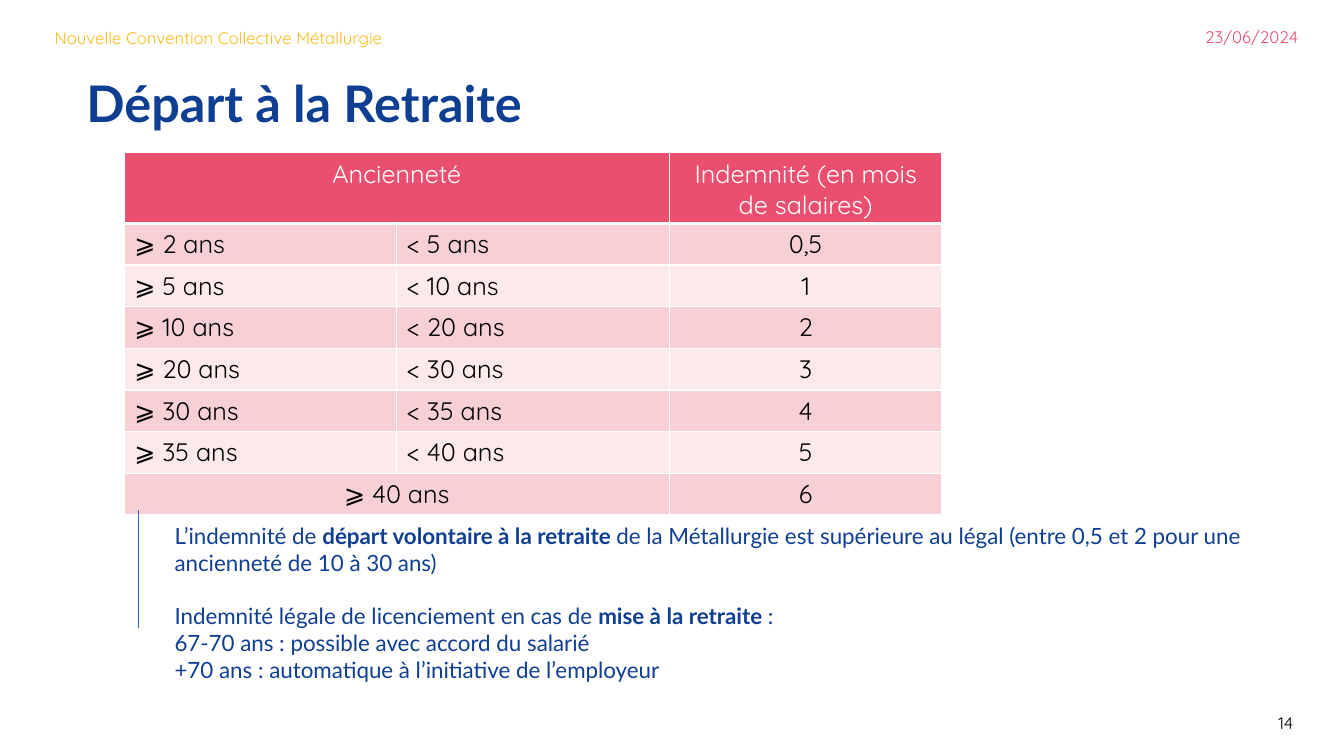
"""Build the slide on retirement allowances by length of service."""
from dataclasses import dataclass

from lxml import etree
from pptx import Presentation
from pptx import util as u
from pptx.dml.color import RGBColor
from pptx.enum import shapes, text
from pptx.oxml.ns import qn


@dataclass(frozen=True)
class Theme:
    """Colours, fonts and type sizes of the slide."""
    blue: str = "0F3F93"
    rule: str = "2669B2"
    yellow: str = "FBBB1D"
    pink: str = "EA4F70"
    band_dark: str = "F7D0D5"
    band_light: str = "FBE9EB"
    white: str = "FFFFFF"
    black: str = "000000"
    heading_font: str = "Lato"
    body_font: str = "Quicksand"
    title_size: int = 36
    table_size: int = 18
    note_size: int = 16
    small_size: int = 12


THEME = Theme()
LEFT, CENTER, RIGHT = text.PP_ALIGN.LEFT, text.PP_ALIGN.CENTER, text.PP_ALIGN.RIGHT

HEADERS = ("Ancienneté", "", "Indemnité (en mois de salaires)")
ALLOWANCES = (
    ("⩾ 2 ans", "< 5 ans", "0,5"),
    ("⩾ 5 ans", "< 10 ans", "1"),
    ("⩾ 10 ans", "< 20 ans", "2"),
    ("⩾ 20 ans", "< 30 ans", "3"),
    ("⩾ 30 ans", "< 35 ans", "4"),
    ("⩾ 35 ans", "< 40 ans", "5"),
    ("⩾ 40 ans", "", "6"),
)
NOTE = (
    (("L’indemnité de ", False),
     ("départ volontaire à la retraite ", True),
     ("de la Métallurgie est supérieure au légal (entre 0,5 et 2 pour une "
      "ancienneté de 10 à 30 ans)", False)),
    (("Indemnité légale de licenciement en cas de ", False),
     ("mise à la retraite ", True),
     (":", False)),
    (("67-70 ans : possible avec accord du salarié", False),),
    (("+70 ans : automatique à l’initiative de l’employeur", False),),
)


def add_run(paragraph, words, font, size, color, bold=False):
    """Append one formatted run to a paragraph."""
    run = paragraph.add_run()
    run.text = words
    run.font.name = font
    run.font.size = u.Pt(size)
    run.font.bold = bold
    run.font.color.rgb = RGBColor.from_string(color)


def add_label(slide, box, words, font, size, color, align=LEFT, bold=False, inset=True):
    """Add a one-line text box and return its paragraph."""
    frame = slide.shapes.add_textbox(*map(u.Cm, box)).text_frame
    frame.word_wrap = True
    if not inset:
        frame.margin_left = frame.margin_top = frame.margin_right = frame.margin_bottom = 0
    paragraph = frame.paragraphs[0]
    paragraph.alignment = align
    add_run(paragraph, words, font, size, color, bold)
    return paragraph


def add_note(slide, box):
    """Add the outlined box that explains the allowances."""
    shape = slide.shapes.add_shape(shapes.MSO_SHAPE.RECTANGLE, *map(u.Cm, box))
    shape.shadow.inherit = False
    shape.fill.background()
    shape.line.color.rgb = RGBColor.from_string(THEME.white)
    shape.line.width = u.Pt(0.75)
    frame = shape.text_frame
    frame.word_wrap = True
    frame.vertical_anchor = text.MSO_ANCHOR.TOP
    for index, runs in enumerate(NOTE):
        paragraph = frame.add_paragraph() if index else frame.paragraphs[0]
        paragraph.alignment = LEFT
        if index == 1:
            paragraph.space_before = u.Pt(19.2)
        for words, bold in runs:
            add_run(paragraph, words, THEME.heading_font, THEME.note_size, THEME.blue, bold)


def set_borders(cell, bottom_width):
    """Draw white borders on the four sides of a cell."""
    properties = cell._tc.get_or_add_tcPr()
    for side, width in (("L", 1), ("R", 1), ("T", 1), ("B", bottom_width)):
        line = etree.SubElement(properties, qn(f"a:ln{side}"), w=str(u.Pt(width)))
        fill = etree.SubElement(line, qn("a:solidFill"))
        etree.SubElement(fill, qn("a:srgbClr"), val=THEME.white)


def fill_cell(cell, words, background, color, align, bottom_width):
    """Set the borders, fill and text of a table cell."""
    set_borders(cell, bottom_width)
    cell.fill.solid()
    cell.fill.fore_color.rgb = RGBColor.from_string(background)
    if words:
        paragraph = cell.text_frame.paragraphs[0]
        paragraph.alignment = align
        add_run(paragraph, words, THEME.body_font, THEME.table_size, color)


def add_allowance_table(slide, left, top):
    """Add the table of allowances by length of service."""
    column_width, header_height, row_height = 6.87, 1.76, 1.05
    rows = (HEADERS, *ALLOWANCES)
    table = slide.shapes.add_table(
        len(rows), len(HEADERS), u.Cm(left), u.Cm(top),
        u.Cm(column_width * len(HEADERS)),
        u.Cm(header_height + row_height * len(ALLOWANCES))).table
    for column in table.columns:
        column.width = u.Cm(column_width)
    for index, row in enumerate(rows):
        header = index == 0
        merged = not row[1]
        table.rows[index].height = u.Cm(header_height if header else row_height)
        band = THEME.band_dark if index % 2 else THEME.band_light
        for position, words in enumerate(row):
            fill_cell(table.cell(index, position), words,
                      THEME.pink if header else band,
                      THEME.white if header else THEME.black,
                      CENTER if merged or position == 2 else LEFT,
                      3 if header else 1)
        if merged:
            table.cell(index, 0).merge(table.cell(index, 1))


def add_rule(slide, x, top, bottom):
    """Add the thin vertical line beside the note."""
    rule = slide.shapes.add_connector(
        shapes.MSO_CONNECTOR.STRAIGHT, u.Cm(x), u.Cm(top), u.Cm(x), u.Cm(bottom))
    rule.line.color.rgb = RGBColor.from_string(THEME.rule)
    rule.line.width = u.Pt(0.5)
    etree.SubElement(rule._element.spPr, qn("a:effectLst"))


def main():
    """Build and save the presentation."""
    presentation = Presentation()
    presentation.slide_width, presentation.slide_height = u.Cm(33.87), u.Cm(19.05)
    slide = presentation.slides.add_slide(presentation.slide_layouts[6])
    title = add_label(slide, (2.18, 1.4, 31.69, 2.11), "Départ à la Retraite",
                      THEME.heading_font, THEME.title_size, THEME.blue,
                      bold=True, inset=False)
    title.line_spacing = u.Pt(55)
    add_label(slide, (1.38, 0.69, 15.88, 0.56), "Nouvelle Convention Collective Métallurgie",
              THEME.body_font, THEME.small_size, THEME.yellow, inset=False)
    add_label(slide, (25.91, 0.56, 7.06, 1.02), "23/06/2024",
              THEME.body_font, THEME.small_size, THEME.pink, RIGHT)
    add_label(slide, (30.53, 17.83, 2.31, 0.69), "14",
              THEME.body_font, THEME.small_size, THEME.black, RIGHT)
    add_note(slide, (4.15, 13.03, 28.7, 4.37))
    add_allowance_table(slide, 3.13, 3.85)
    add_rule(slide, 3.49, 12.85, 15.82)
    presentation.save("out.pptx")


if __name__ == "__main__":
    main()
